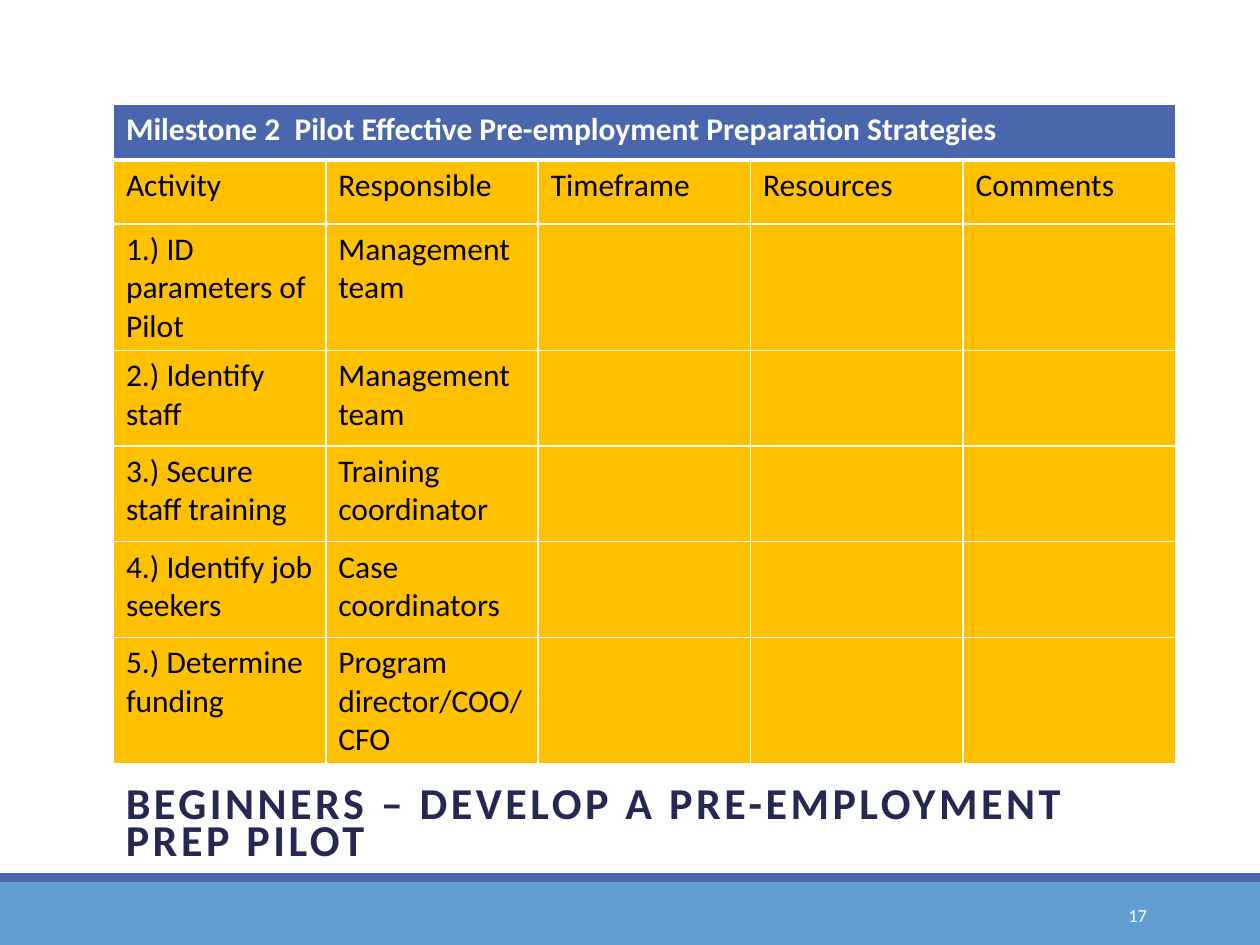
from lxml import etree
from pptx import Presentation
from pptx import util as u
from pptx.dml.color import RGBColor
from pptx.enum import shapes, text
from pptx.oxml import ns

WIDE, HIGH = 10, 7.5
BLUE = RGBColor(0x4A, 0x66, 0xAC)
SKY = RGBColor(0x62, 0x9D, 0xD1)
NAVY = RGBColor(0x24, 0x28, 0x52)
GOLD = RGBColor(0xFF, 0xC0, 0x00)
WHITE = RGBColor(0xFF, 0xFF, 0xFF)
BLACK = RGBColor(0, 0, 0)

TITLE = "BEGINNERS – DEVELOP A PRE-EMPLOYMENT PREP PILOT"
GOAL = "Milestone 2  Pilot Effective Pre-employment Preparation Strategies"
HEADS = ["Activity", "Responsible", "Timeframe", "Resources", "Comments"]
TASKS = [
    ["1.) ID parameters of Pilot", "Management team"],
    ["2.) Identify staff", "Management team"],
    ["3.) Secure staff training", "Training coordinator"],
    ["4.) Identify job seekers", "Case coordinators"],
    ["5.) Determine funding", "Program director/COO/CFO"],
]
ROWS = [0.44, 0.51] + [0.76] * len(TASKS)


def inches(*sizes):
    return [u.Inches(size) for size in sizes]


def style(font, size, color, bold=False):
    form = {"name": "Calibri", "size": u.Pt(size), "bold": bold}
    for key, value in form.items():
        setattr(font, key, value)
    font.color.rgb = color


def add_band(slide, top, height, color):
    band = slide.shapes.add_shape(
        shapes.MSO_SHAPE.RECTANGLE, *inches(0, top, WIDE, height))
    band.shadow.inherit = False
    band.fill.solid()
    band.fill.fore_color.rgb = color
    band.line.fill.background()


def add_text(slide, box, words, look, frame_form, para_form):
    """Add a one-paragraph text box and return its run."""
    frame = slide.shapes.add_textbox(*inches(*box)).text_frame
    para = frame.paragraphs[0]
    for item, form in ((frame, frame_form), (para, para_form)):
        for key, value in form.items():
            setattr(item, key, value)
    frame.word_wrap = True
    run = para.add_run()
    run.text = words
    style(run.font, *look)
    return run


def edge(cell, **widths):
    """Draw white cell borders; widths in points override the 1 pt default."""
    props = cell._tc.get_or_add_tcPr()
    for side in "LRTB":
        line = etree.SubElement(props, ns.qn("a:ln" + side),
                                w=str(u.Pt(widths.get(side, 1))))
        fill = etree.SubElement(line, ns.qn("a:solidFill"))
        etree.SubElement(fill, ns.qn("a:srgbClr"), val=str(WHITE))


def fill_cell(cell, words, head, below):
    edge(cell, **({"B": 3} if head else {"T": 3} if below else {}))
    cell.fill.solid()
    cell.fill.fore_color.rgb = BLUE if head else GOLD
    cell.text = words
    para = cell.text_frame.paragraphs[0]
    look = (18, WHITE if head else BLACK, head)
    style(para.runs[0].font if words else para.font, *look)


def add_plan(slide):
    count = len(HEADS)
    shape = slide.shapes.add_table(
        len(ROWS), count, *inches(0.9, 0.83, 8.43, sum(ROWS)))
    table = shape.table
    for row, height in zip(table.rows, ROWS):
        row.height = u.Inches(height)
    for r, words in enumerate([[GOAL], HEADS] + TASKS):
        padded = words + [""] * (count - len(words))
        for c, word in enumerate(padded):
            fill_cell(table.cell(r, c), word, r == 0, r == 1)
    table.cell(0, 0).merge(table.cell(0, count - 1))


def main():
    deck = Presentation()
    deck.slide_width, deck.slide_height = inches(WIDE, HIGH)
    slide = deck.slides.add_slide(deck.slide_layouts[6])
    add_band(slide, 7, 0.5, SKY)
    add_band(slide, 6.93, 0.07, BLUE)
    title = add_text(slide, (0.9, 5.72, 8.25, 1.11), TITLE, (25.2, NAVY, True),
                     {"margin_top": u.Inches(0.55), "margin_bottom": 0},
                     {"line_spacing": 0.7, "space_after": u.Pt(2)})
    title.font._element.set("spc", "200")
    add_text(slide, (8.12, 7.06, 1.08, 0.4), "17", (10.5, WHITE),
             {"vertical_anchor": text.MSO_ANCHOR.MIDDLE},
             {"alignment": text.PP_ALIGN.RIGHT})
    add_plan(slide)
    deck.save("out.pptx")


if __name__ == "__main__":
    main()
